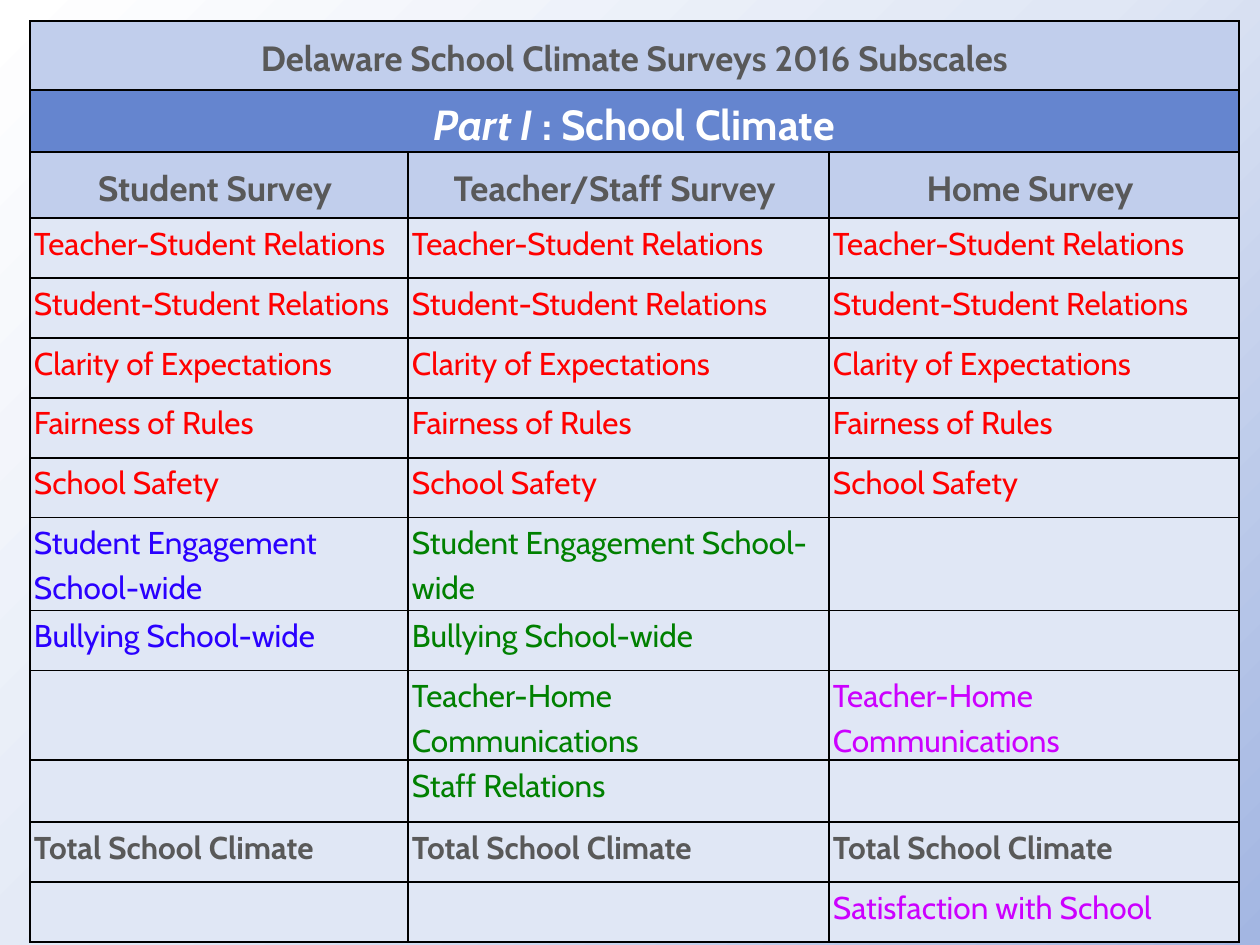
import pptx
import pptx.util
import pptx.oxml
import pptx.dml.color
import pptx.enum.text
import pptx.oxml.ns

RGB = pptx.dml.color.RGBColor
GREY = RGB(0x59, 0x59, 0x59)
WHITE = RGB(0xFF, 0xFF, 0xFF)
RED = RGB(0xFF, 0x00, 0x00)
BLUE = RGB(0x2A, 0x00, 0xFF)
GREEN = RGB(0x00, 0x80, 0x00)
PINK = RGB(0xCC, 0x00, 0xFF)
BAND = RGB(0x65, 0x85, 0xCF)
HEAD = RGB(0xC1, 0xCE, 0xEC)
PALE = RGB(0xE0, 0xE7, 0xF5)
DUSK = RGB(0xA3, 0xB6, 0xE2)
BLACK = RGB(0x00, 0x00, 0x00)

FONT = "Cabin"
SCALE = 914400 / 126
COLS = [378, 421, 410]
ROWS = [69, 62, 66] + [60] * 5 + [93, 60, 72, 62, 60, 60]
SHARED = [
    "Teacher-Student Relations",
    "Student-Student Relations",
    "Clarity of Expectations",
    "Fairness of Rules",
    "School Safety",
]
ENGAGE = "Student Engagement School-wide"
BULLY = "Bullying School-wide"
HOME = "Teacher-Home Communications"
EXTRA = [
    [(ENGAGE, BLUE), (ENGAGE, GREEN), None],
    [(BULLY, BLUE), (BULLY, GREEN), None],
    [None, (HOME, GREEN), (HOME, PINK)],
    [None, ("Staff Relations", GREEN), None],
    [("Total School Climate", GREY)] * 3,
    [None, None, ("Satisfaction with School", PINK)],
]


def px(n):
    return pptx.util.Emu(round(n * SCALE))


def node(tag, body, attrs=""):
    space = pptx.oxml.ns.nsdecls("a")
    return pptx.oxml.parse_xml(f"<a:{tag} {space} {attrs}>{body}</a:{tag}>")


def paint_back(slide):
    fill = slide.background.fill
    fill.gradient()
    grad = slide.background._cSld.bg.bgPr.find(pptx.oxml.ns.qn("a:gradFill"))
    for part in list(grad):
        grad.remove(part)
    stops = "".join(
        f'<a:gs pos="{pos * 1000}"><a:srgbClr val="{tint}"/></a:gs>'
        for pos, tint in [(0, DUSK), (50, PALE), (100, WHITE)]
    )
    grad.append(node("gsLst", stops))
    grad.append(node("path", '<a:fillToRect l="100000" t="100000"/>', 'path="circle"'))


def style_cell(cell, fill):
    cell.margin_left = cell.margin_right = px(4)
    cell.margin_top = px(1)
    cell.margin_bottom = 0
    cell.fill.solid()
    cell.fill.fore_color.rgb = fill
    props = cell._tc.get_or_add_tcPr()
    line = f'<a:solidFill><a:srgbClr val="{BLACK}"/></a:solidFill>'
    for spot, side in enumerate(["lnL", "lnR", "lnT", "lnB"]):
        props.insert(spot, node(side, line, 'w="12700"'))


def write(cell, runs, color, size=18, bold=False, center=False):
    para = cell.text_frame.paragraphs[0]
    para.line_spacing = 1.15
    para.space_after = pptx.util.Pt(10)
    if center:
        para.alignment = pptx.enum.text.PP_ALIGN.CENTER
        cell.vertical_anchor = pptx.enum.text.MSO_ANCHOR.MIDDLE
    for text, slant in runs:
        run = para.add_run()
        run.text = text
        font = run.font
        font.name = FONT
        font.size = pptx.util.Pt(size)
        font.bold = bold
        font.italic = slant
        font.color.rgb = color


def add_grid(slide):
    frame = slide.shapes.add_table(
        len(ROWS), len(COLS), px(30), px(21), px(sum(COLS)), px(sum(ROWS))
    )
    grid = frame.table
    grid.first_row = grid.horz_banding = False
    for col, width in zip(grid.columns, COLS):
        col.width = px(width)
    for row, height in zip(grid.rows, ROWS):
        row.height = px(height)
    fills = [HEAD, BAND, HEAD] + [PALE] * (len(ROWS) - 3)
    for row, fill in zip(grid.rows, fills):
        for cell in row.cells:
            style_cell(cell, fill)
    return grid


def fill_heads(grid):
    for row in range(2):
        grid.cell(row, 0).merge(grid.cell(row, 2))
    title = "Delaware School Climate Surveys 2016 Subscales"
    write(grid.cell(0, 0), [(title, False)], GREY, 20, True, True)
    part = [("Part I", True), (" : School Climate", False)]
    write(grid.cell(1, 0), part, WHITE, 24, True, True)
    for col, name in enumerate(["Student", "Teacher/Staff", "Home"]):
        write(grid.cell(2, col), [(f"{name} Survey ", False)], GREY, 20, True, True)


def fill_body(grid):
    body = [[(text, RED)] * 3 for text in SHARED] + EXTRA
    for row, items in enumerate(body, 3):
        for col, item in enumerate(items):
            if item:
                text, color = item
                write(grid.cell(row, col), [(text, False)], color, bold=color == GREY)


def main():
    deck = pptx.Presentation()
    deck.slide_width = px(1260)
    deck.slide_height = px(945)
    slide = deck.slides.add_slide(deck.slide_layouts[6])
    paint_back(slide)
    grid = add_grid(slide)
    fill_heads(grid)
    fill_body(grid)
    deck.save("out.pptx")


if __name__ == "__main__":
    main()
